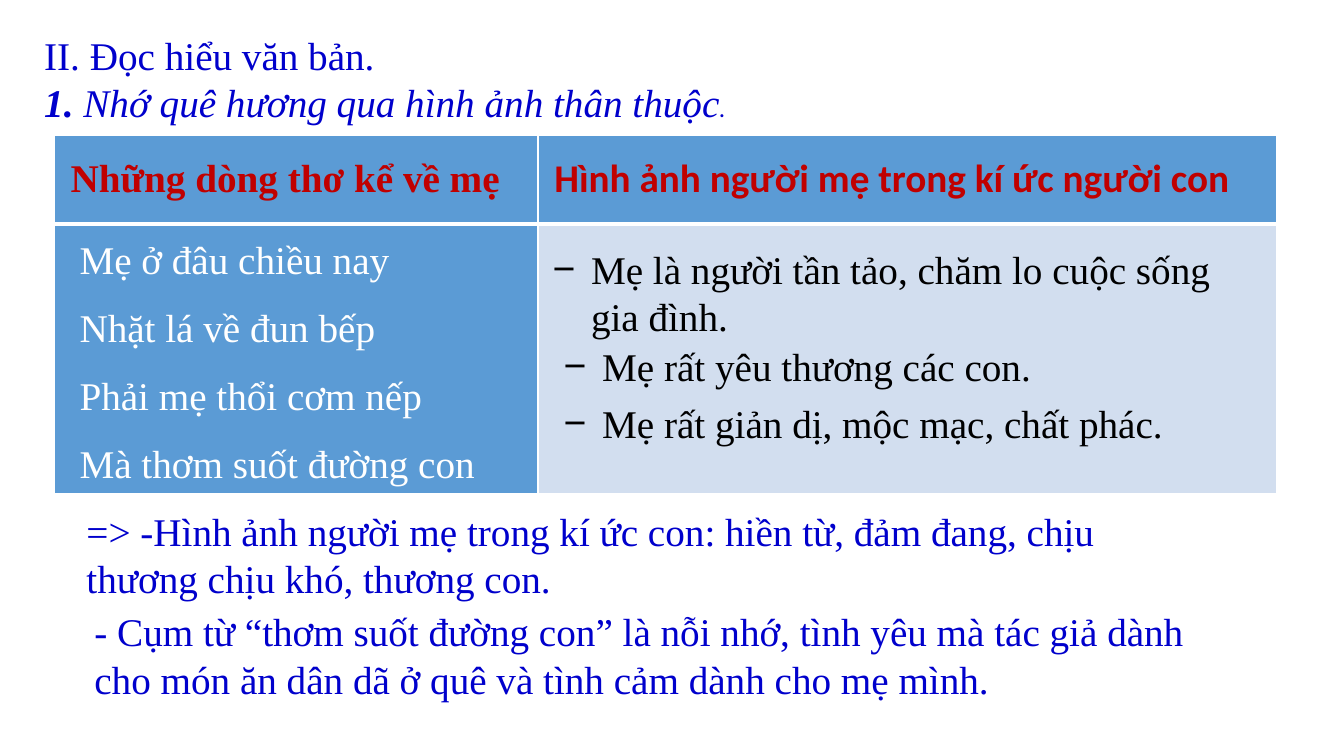
from lxml import etree
from pptx import Presentation
from pptx.dml.color import RGBColor
from pptx.enum.text import MSO_ANCHOR, MSO_AUTO_SIZE, PP_ALIGN
from pptx.oxml.ns import qn
from pptx.util import Cm, Pt

TOP, MIDDLE = MSO_ANCHOR.TOP, MSO_ANCHOR.MIDDLE
LEFT = PP_ALIGN.LEFT
NO_FIT = MSO_AUTO_SIZE.NONE
SERIF, SANS = "Times New Roman", "Calibri"
COLORS = {
    "ink": "0000CC",
    "header": "C00000",
    "blue": "5B9BD5",
    "pale": "D2DEEF",
    "white": "FFFFFF",
    "black": "000000",
}
TWO_CONTENT = 3
FIRST_LINE = 0.38
HANGING = 0.97


class LessonSlide:
    def __init__(self, deck):
        self.page = deck.slides.add_slide(deck.slide_layouts[TWO_CONTENT])
        self.size = Pt(28)

    def place(self, box, left, top, width, height):
        box.left, box.top = Cm(left), Cm(top)
        box.width, box.height = Cm(width), Cm(height)
        frame = box.text_frame
        frame.word_wrap = True
        frame.auto_size = NO_FIT
        frame.vertical_anchor = TOP
        return frame

    def span(self, para, text, color, font=SERIF, size=None, bold=False, italic=False):
        span = para.add_run()
        span.text = text
        span.font.name = font
        span.font.size = size or self.size
        span.font.bold = bold
        span.font.italic = italic
        span.font.color.rgb = RGBColor.from_string(COLORS[color])

    def para(self, frame, index, before=0, after=0, margin=0, indent=0, bullet=None):
        para = frame.paragraphs[0] if index == 0 else frame.add_paragraph()
        para.alignment = LEFT
        para.space_before, para.space_after = Pt(before), Pt(after)
        props = para._p.get_or_add_pPr()
        props.set("marL", str(Cm(margin)))
        props.set("indent", str(Cm(indent)))
        if bullet:
            tint = etree.SubElement(props, qn("a:buClr"))
            etree.SubElement(tint, qn("a:srgbClr"), val=COLORS["black"])
            etree.SubElement(props, qn("a:buChar"), char=bullet)
        else:
            etree.SubElement(props, qn("a:buNone"))
        return para

    def heading(self, section, number, topic, *bounds):
        frame = self.place(self.page.shapes.title, *bounds)
        self.span(self.para(frame, 0), section, "ink")
        para = self.para(frame, 1)
        self.span(para, number, "ink", bold=True, italic=True)
        self.span(para, topic, "ink", italic=True)
        self.span(para, ".", "ink", font=SANS, size=Pt(18), italic=True)

    def verses(self, lines, *bounds):
        frame = self.place(self.page.placeholders[1], *bounds)
        for index, line in enumerate(lines):
            para = self.para(frame, index, after=15, indent=FIRST_LINE)
            self.span(para, line, "white")

    def bullets(self, items, *bounds):
        frame = self.place(self.page.placeholders[2], *bounds)
        for index, (text, before, shift) in enumerate(items):
            para = self.para(frame, index, before=before, margin=HANGING + shift,
                             indent=-HANGING, bullet="−")
            self.span(para, text, "black")

    def note(self, text, *bounds):
        box = self.page.shapes.add_textbox(0, 0, 0, 0)
        frame = self.place(box, *bounds)
        self.span(self.para(frame, 0), text, "ink")

    def border(self, cell, widths):
        props = cell._tc.get_or_add_tcPr()
        for index, (side, width) in enumerate(zip("LRTB", widths)):
            line = etree.Element(qn(f"a:ln{side}"), w=str(Pt(width)))
            fill = etree.SubElement(line, qn("a:solidFill"))
            etree.SubElement(fill, qn("a:srgbClr"), val=COLORS["white"])
            props.insert(index, line)

    def table(self, headers, fills, left, top, widths, heights):
        shape = self.page.shapes.add_table(
            len(heights), len(widths), Cm(left), Cm(top), Cm(sum(widths)), Cm(sum(heights)))
        tree = self.page.shapes._spTree
        tree.remove(shape._element)
        tree.insert(2, shape._element)
        grid = shape.table
        for column, width in zip(grid.columns, widths):
            column.width = Cm(width)
        for row, height in zip(grid.rows, heights):
            row.height = Cm(height)
        for row, row_fills in enumerate(fills):
            for column, color in enumerate(row_fills):
                cell = grid.cell(row, column)
                cell.fill.solid()
                cell.fill.fore_color.rgb = RGBColor.from_string(COLORS[color])
                self.border(cell, (1, 1, 1, 3) if row == 0 else (1, 1, 3, 1))
        for column, (text, font) in enumerate(headers):
            cell = grid.cell(0, column)
            cell.vertical_anchor = MIDDLE
            cell.margin_left = cell.margin_right = Cm(0.03)
            cell.margin_top = cell.margin_bottom = 0
            para = self.para(cell.text_frame, 0, indent=FIRST_LINE)
            self.span(para, text, "header", font=font, bold=True)


def main():
    deck = Presentation()
    deck.slide_width, deck.slide_height = Cm(33.87), Cm(19.05)
    lesson = LessonSlide(deck)
    lesson.heading("II. Đọc hiểu văn bản.", "1. ", "Nhớ quê hương qua hình ảnh thân thuộc",
                   0.86, 0.66, 18.69, 3.43)
    lesson.table(
        [("Những dòng thơ kể về mẹ", SERIF), ("Hình ảnh người mẹ trong kí ức người con", SANS)],
        [("blue", "blue"), ("blue", "pale")],
        1.37, 3.4, (12.19, 18.62), (2.24, 6.81))
    lesson.verses(
        ["Mẹ ở đâu chiều nay", "Nhặt lá về đun bếp",
         "Phải mẹ thổi cơm nếp", "Mà thơm suốt đường con"],
        1.37, 5.79, 11.61, 6.65)
    lesson.bullets(
        [("Mẹ là người tần tảo, chăm lo cuộc sống gia đình.", 0, 0),
         ("Mẹ rất yêu thương các con.", 2, 0.28),
         ("Mẹ rất giản dị, mộc mạc, chất phác.", 7.5, 0.28)],
        13.67, 6.05, 18.08, 5.36)
    lesson.note("=> -Hình ảnh người mẹ trong kí ức con: hiền từ, đảm đang, chịu "
                "thương chịu khó, thương con.", 1.93, 12.65, 28.12, 2.64)
    lesson.note("- Cụm từ “thơm suốt đường con” là nỗi nhớ, tình yêu mà tác giả dành "
                "cho món ăn dân dã ở quê và tình cảm dành cho mẹ mình.",
                2.13, 15.19, 29.31, 2.64)
    deck.save("out.pptx")


if __name__ == "__main__":
    main()
